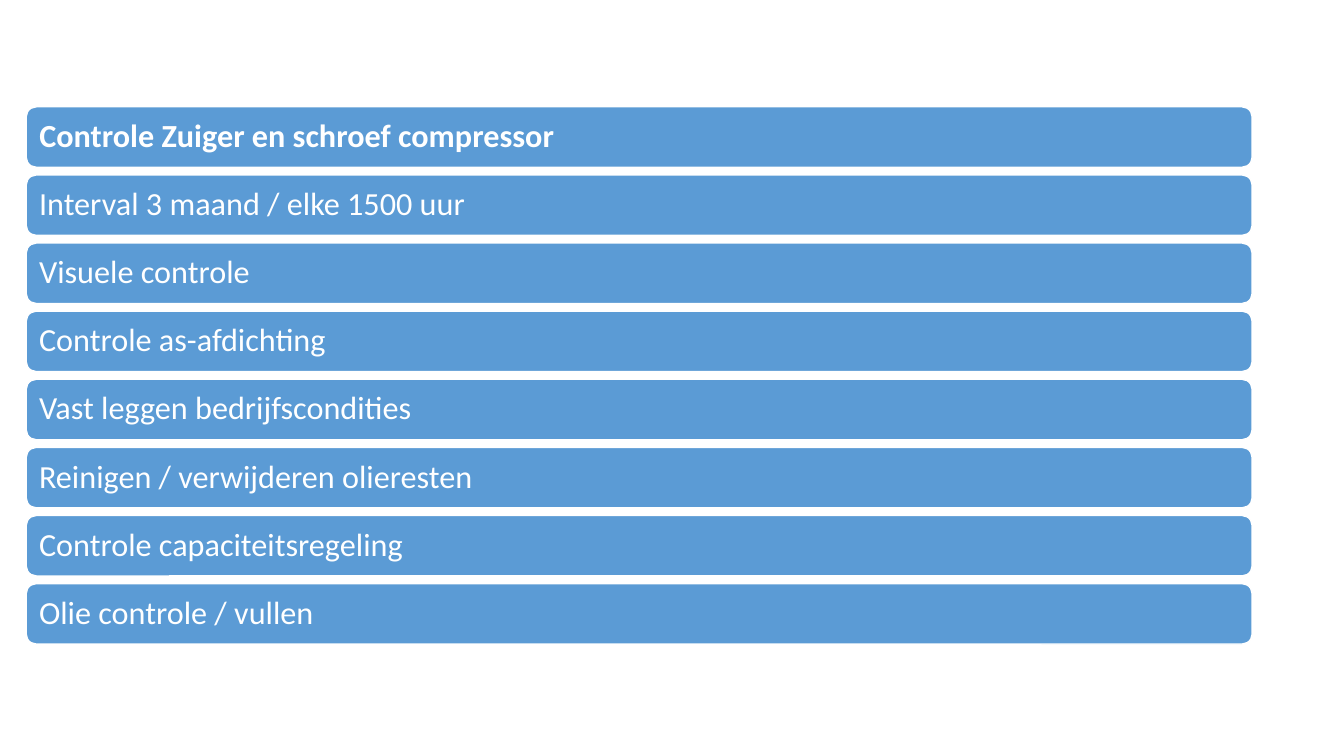
import pptx
import pptx.util
import pptx.dml.color
import pptx.enum.shapes
import pptx.enum.text

Inches = pptx.util.Inches
Pt = pptx.util.Pt
RGBColor = pptx.dml.color.RGBColor

HEADING = "Controle Zuiger en schroef compressor"
CHECKS = [
    "Interval 3 maand / elke 1500 uur",
    "Visuele controle",
    "Controle as-afdichting",
    "Vast leggen bedrijfscondities",
    "Reinigen / verwijderen olieresten",
    "Controle capaciteitsregeling",
    "Olie controle / vullen",
]

BLUE = RGBColor(0x5B, 0x9B, 0xD5)
WHITE = RGBColor(0xFF, 0xFF, 0xFF)

LEFT, WIDTH, HEIGHT = 0.26, 12.16, 0.6
FIRST_TOP, LAST_TOP = 1.06, 5.79
PITCH = (LAST_TOP - FIRST_TOP) / len(CHECKS)
INSET = 0.1
CORNER = 0.03  # how far the rounded corners push the text area inwards


def add_bar(slide, top):
    bar = slide.shapes.add_shape(
        pptx.enum.shapes.MSO_SHAPE.ROUNDED_RECTANGLE,
        Inches(LEFT), Inches(top), Inches(WIDTH), Inches(HEIGHT))
    bar.shadow.inherit = False
    bar.fill.solid()
    bar.fill.fore_color.rgb = BLUE
    bar.line.color.rgb = WHITE
    bar.line.width = Pt(1)
    return bar


def write_label(shape, label, bold=False):
    frame = shape.text_frame
    frame.text = label
    frame.word_wrap = True
    frame.auto_size = pptx.enum.text.MSO_AUTO_SIZE.NONE
    frame.vertical_anchor = pptx.enum.text.MSO_ANCHOR.MIDDLE
    frame.margin_left = frame.margin_right = Inches(INSET)
    frame.margin_top = frame.margin_bottom = Inches(INSET)
    paragraph = frame.paragraphs[0]
    paragraph.alignment = pptx.enum.text.PP_ALIGN.LEFT
    paragraph.line_spacing = 0.9
    font = paragraph.runs[0].font
    font.name = "Calibri"
    font.size = Pt(23)
    font.bold = bold
    font.color.rgb = WHITE


def main():
    deck = pptx.Presentation()
    deck.slide_width = Inches(13.33)
    deck.slide_height = Inches(7.5)
    slide = deck.slides.add_slide(deck.slide_layouts[5])

    heading_bar = add_bar(slide, FIRST_TOP)
    heading = slide.shapes.title
    heading.left = Inches(LEFT + CORNER)
    heading.top = Inches(FIRST_TOP + CORNER)
    heading.width = Inches(WIDTH - 2 * CORNER)
    heading.height = Inches(HEIGHT - 2 * CORNER)
    write_label(heading, HEADING, bold=True)
    heading_bar.element.addnext(heading.element)  # the title lies on its bar

    for row, check in enumerate(CHECKS, start=1):
        write_label(add_bar(slide, FIRST_TOP + row * PITCH), check)

    deck.save("out.pptx")


if __name__ == "__main__":
    main()
